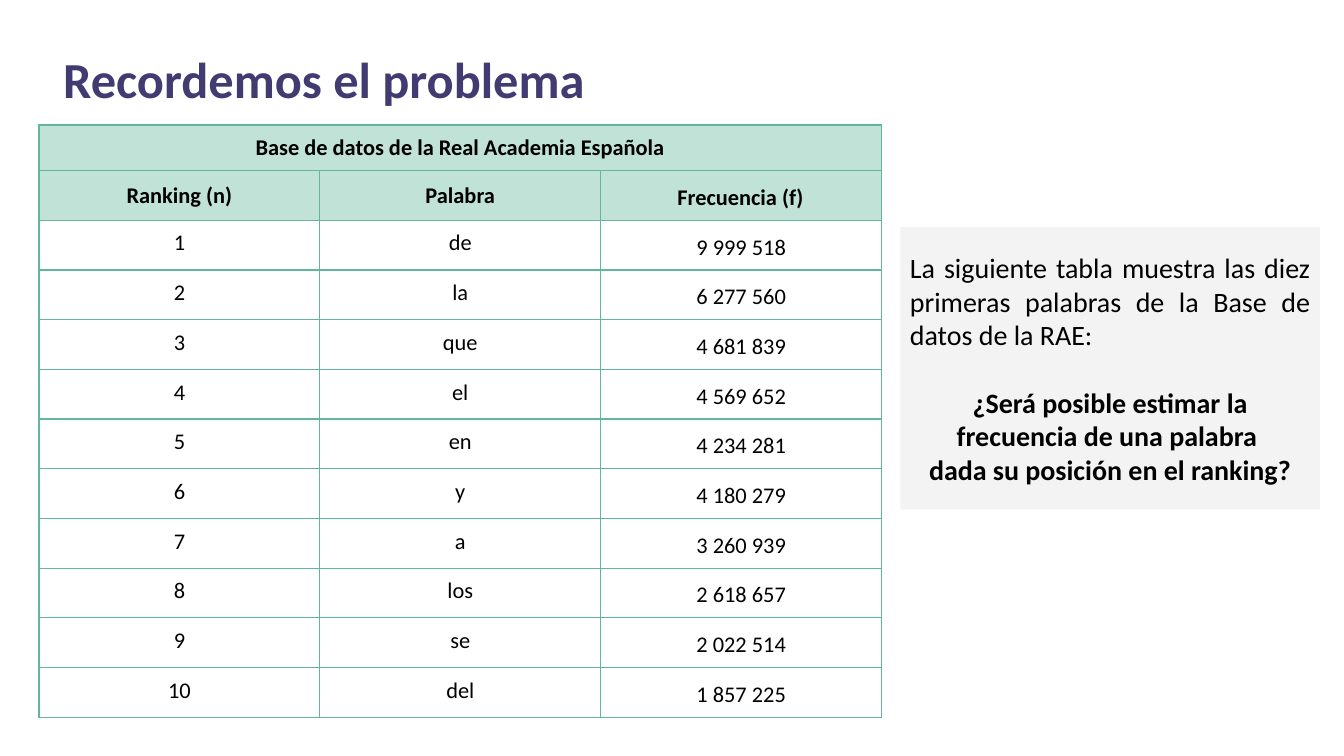
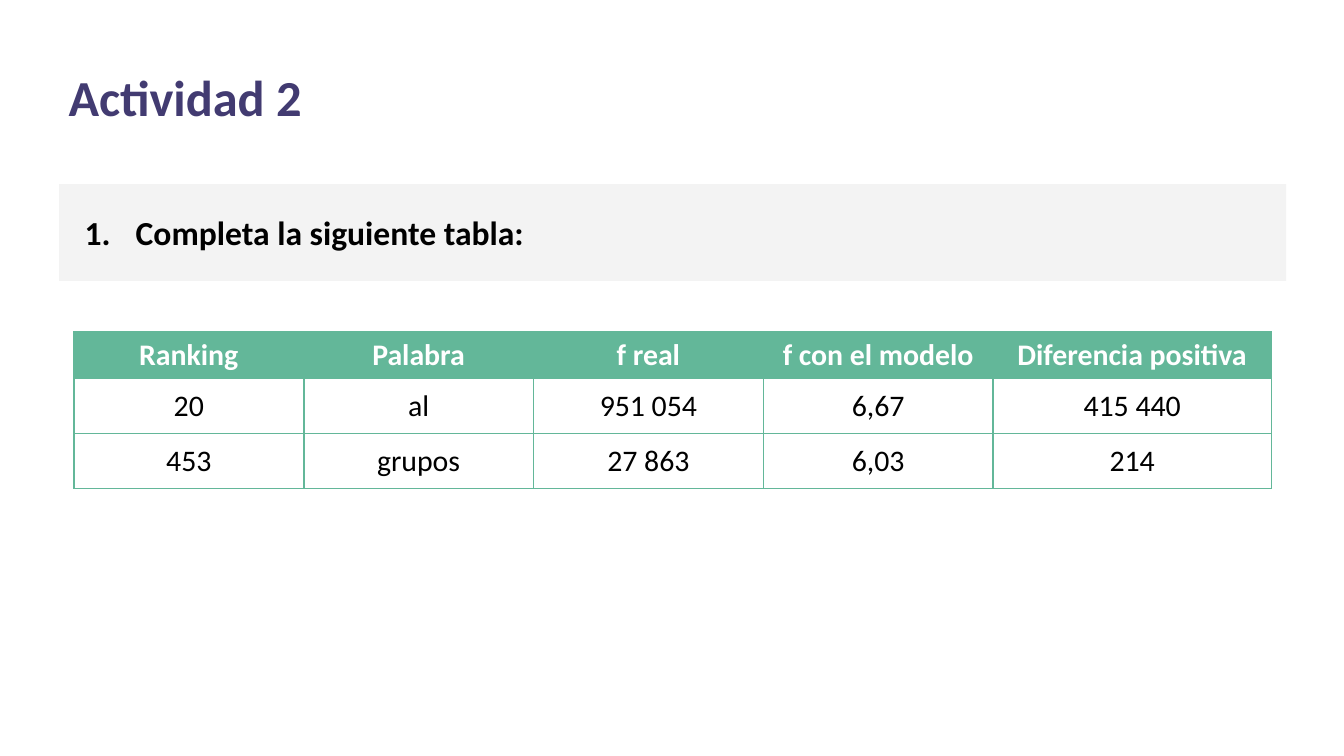
"""Builds two slides about word frequencies and their ranking."""
from dataclasses import dataclass
from typing import Any, Optional

from lxml import etree
from pptx import Presentation
from pptx.dml.color import RGBColor
from pptx.enum.shapes import MSO_SHAPE
from pptx.enum.text import MSO_ANCHOR, MSO_AUTO_SIZE, PP_ALIGN
from pptx.oxml.ns import qn
from pptx.util import Inches, Pt

LEFT, CENTER, JUSTIFY = PP_ALIGN.LEFT, PP_ALIGN.CENTER, PP_ALIGN.JUSTIFY
TOP, MIDDLE = MSO_ANCHOR.TOP, MSO_ANCHOR.MIDDLE
FIT_SHAPE = MSO_AUTO_SIZE.SHAPE_TO_FIT_TEXT
RECTANGLE = MSO_SHAPE.RECTANGLE

SLIDE_WIDTH = Inches(10)
SLIDE_HEIGHT = SLIDE_WIDTH * 9 // 16
PLAIN_TABLE_STYLE = "{2D5ABB26-0587-4C30-8999-92F81FD0307C}"

FONT = "Calibri"
PURPLE, BLACK, WHITE = "423B71", "000000", "FFFFFF"
PANEL_GRAY, PALE_GREEN = "F3F3F3", "C0E2D7"
RANKING_GREEN, ACTIVITY_GREEN = "62B799", "63B799"

FREQUENCIES = [
    ("de", "9 999 518"),
    ("la", "6 277 560"),
    ("que", "4 681 839"),
    ("el", "4 569 652"),
    ("en", "4 234 281"),
    ("y", "4 180 279"),
    ("a", "3 260 939"),
    ("los", "2 618 657"),
    ("se", "2 022 514"),
    ("del", "1 857 225"),
]
ACTIVITY_ROWS = [
    ("Ranking", "Palabra", "f real", "f con el modelo", "Diferencia positiva"),
    ("20", "al", "951 054", "6,67", "415 440"),
    ("453", "grupos", "27 863", "6,03", "214"),
]


@dataclass(frozen=True)
class Line:
    """A paragraph with its format."""

    text: str
    size: float
    bold: bool = False
    color: str = BLACK
    align: Any = CENTER
    spacing: float = 1.0
    before: float = 0
    indent: float = 0
    hanging: float = 0
    numbered: bool = False


@dataclass(frozen=True)
class CellStyle:
    """The look of a table cell around its text."""

    border: str
    border_width: float
    inset_x: float
    inset_y: float
    anchor: Any = MIDDLE
    fill: Optional[str] = None


@dataclass(frozen=True)
class Panel:
    """A gray rectangle with text."""

    left: float
    top: float
    width: float
    height: float
    lines: tuple[Line, ...]


def rgb(color: str) -> RGBColor:
    """Turn a hex string into a colour."""
    return RGBColor.from_string(color)


def set_values(target: Any, values: dict[str, Any]) -> None:
    """Set each named attribute of the target."""
    for name, value in values.items():
        setattr(target, name, value)


def margins(inset_x: float, inset_y: float) -> dict[str, Any]:
    """Give the four margins of a text frame or cell."""
    return {
        "margin_left": Inches(inset_x),
        "margin_right": Inches(inset_x),
        "margin_top": Inches(inset_y),
        "margin_bottom": Inches(inset_y),
    }


def add_number(properties: Any) -> None:
    """Number a paragraph automatically."""
    color = etree.SubElement(properties, qn("a:buClr"))
    etree.SubElement(color, qn("a:srgbClr"), val=BLACK)
    etree.SubElement(properties, qn("a:buFont"), typeface=FONT)
    etree.SubElement(properties, qn("a:buAutoNum"), type="arabicPeriod")


def write_lines(frame: Any, lines: tuple[Line, ...]) -> None:
    """Write the lines as paragraphs of a text frame."""
    for index, line in enumerate(lines):
        para = frame.add_paragraph() if index else frame.paragraphs[0]
        set_values(para, {
            "alignment": line.align,
            "line_spacing": line.spacing,
            "space_before": Pt(line.before),
        })
        properties = para._p.get_or_add_pPr()
        properties.set("marL", str(Inches(line.indent)))
        properties.set("indent", str(Inches(line.hanging)))
        if line.numbered:
            add_number(properties)
        span = para.add_run()
        span.text = line.text
        set_values(span.font, {"name": FONT, "size": Pt(line.size), "bold": line.bold})
        span.font.color.rgb = rgb(line.color)


def add_panel(page: Any, panel: Panel) -> None:
    """Draw a gray panel."""
    box = page.shapes.add_shape(
        RECTANGLE, Inches(panel.left), Inches(panel.top),
        Inches(panel.width), Inches(panel.height),
    )
    box.shadow.inherit = False
    box.fill.solid()
    box.fill.fore_color.rgb = rgb(PANEL_GRAY)
    box.line.fill.background()
    set_values(box.text_frame, {
        "word_wrap": True, "vertical_anchor": MIDDLE, **margins(0.07, 0.07),
    })
    write_lines(box.text_frame, panel.lines)


def add_title(page: Any, text: str, left: float, top: float) -> None:
    """Write the slide title."""
    box = page.shapes.add_textbox(Inches(left), Inches(top), Inches(6.7), Inches(0.53))
    set_values(box.text_frame, {
        "word_wrap": True, "auto_size": FIT_SHAPE, **margins(0.07, 0.04),
    })
    write_lines(box.text_frame, (Line(text, 27, True, PURPLE, LEFT),))


def fill_cell(cell: Any, line: Line, style: CellStyle) -> None:
    """Write and style one table cell."""
    set_values(cell, {
        "vertical_anchor": style.anchor, **margins(style.inset_x, style.inset_y),
    })
    if style.fill:
        cell.fill.solid()
        cell.fill.fore_color.rgb = rgb(style.fill)
    else:
        cell.fill.background()
    properties = cell._tc.get_or_add_tcPr()
    for index, side in enumerate(("lnL", "lnR", "lnT", "lnB")):
        border = etree.Element(
            qn(f"a:{side}"), w=str(Pt(style.border_width)), cap="flat", cmpd="sng",
        )
        solid = etree.SubElement(border, qn("a:solidFill"))
        etree.SubElement(solid, qn("a:srgbClr"), val=style.border)
        etree.SubElement(border, qn("a:prstDash"), val="solid")
        properties.insert(index, border)
    if line.text:
        write_lines(cell.text_frame, (line,))


def add_grid(page: Any, left: float, top: float, widths: list[float],
             heights: list[float], cells: list[list[tuple[Line, CellStyle]]]) -> Any:
    """Add a table and return it."""
    frame = page.shapes.add_table(
        len(heights), len(widths), Inches(left), Inches(top),
        Inches(sum(widths)), Inches(sum(heights)),
    )
    table = frame.table
    set_values(table, {"first_row": False, "horz_banding": False})
    table._tbl.tblPr.find(qn("a:tableStyleId")).text = PLAIN_TABLE_STYLE
    for column, width in zip(table.columns, widths):
        column.width = Inches(width)
    for row, height, contents in zip(table.rows, heights, cells):
        row.height = Inches(height)
        for cell, (line, style) in zip(row.cells, contents):
            fill_cell(cell, line, style)
    return table


def build_problem(page: Any) -> None:
    """Build the slide that recalls the problem."""
    add_panel(page, Panel(6.7, 1.69, 3.12, 2.1, (
        Line("La siguiente tabla muestra las diez primeras palabras de la "
             "Base de datos de la RAE:", 15, align=JUSTIFY),
        Line("¿Será posible estimar la frecuencia de una palabra ", 15, True, before=18),
        Line("dada su posición en el ranking?", 15, True),
    )))
    add_title(page, "Recordemos el problema", 0.4, 0.32)

    base = (RANKING_GREEN, 0.75, 0.07, 0.07)
    heading = CellStyle(*base, fill=PALE_GREEN)
    frequency_heading = CellStyle(*base, anchor=TOP, fill=PALE_GREEN)
    body = CellStyle(*base, anchor=TOP)
    banner = ("Base de datos de la Real Academia Española", "", "")
    cells = [
        [(Line(text, 12, True), heading) for text in banner],
        [
            (Line("Ranking (n)", 12, True), heading),
            (Line("Palabra", 12, True), heading),
            (Line("Frecuencia (f)", 12, True, align=LEFT, spacing=1.15, indent=0.5),
             frequency_heading),
        ],
    ]
    for rank, (word, frequency) in enumerate(FREQUENCIES, 1):
        cells.append([
            (Line(str(rank), 12), body),
            (Line(word, 12), body),
            (Line(frequency, 12, spacing=1.15), body),
        ])
    heights = [0.27] + [0.29] * (len(cells) - 1)
    table = add_grid(page, 0.29, 0.93, [2.09] * 3, heights, cells)
    table.cell(0, 0).merge(table.cell(0, 2))


def build_activity(page: Any) -> None:
    """Build the slide with the activity."""
    add_panel(page, Panel(0.44, 1.37, 9.13, 0.72, (
        Line("Completa la siguiente tabla:", 18, True, align=JUSTIFY,
             indent=0.5, hanging=-0.38, numbered=True),
    )))
    add_title(page, "Actividad 2", 0.44, 0.45)

    base = (ACTIVITY_GREEN, 1, 0.08, 0.04)
    heading, body = CellStyle(*base, fill=ACTIVITY_GREEN), CellStyle(*base)
    headings, *answers = ACTIVITY_ROWS
    cells = [[(Line(text, 16, True, WHITE), heading) for text in headings]]
    cells += [[(Line(text, 16), body) for text in row] for row in answers]
    add_grid(page, 0.55, 2.47, [1.71] * 4 + [2.07], [0.11, 0.41, 0.41], cells)


def main() -> None:
    """Build and save the deck."""
    deck = Presentation()
    set_values(deck, {"slide_width": SLIDE_WIDTH, "slide_height": SLIDE_HEIGHT})
    for build in (build_problem, build_activity):
        build(deck.slides.add_slide(deck.slide_layouts[6]))
    deck.save("out.pptx")


if __name__ == "__main__":
    main()
